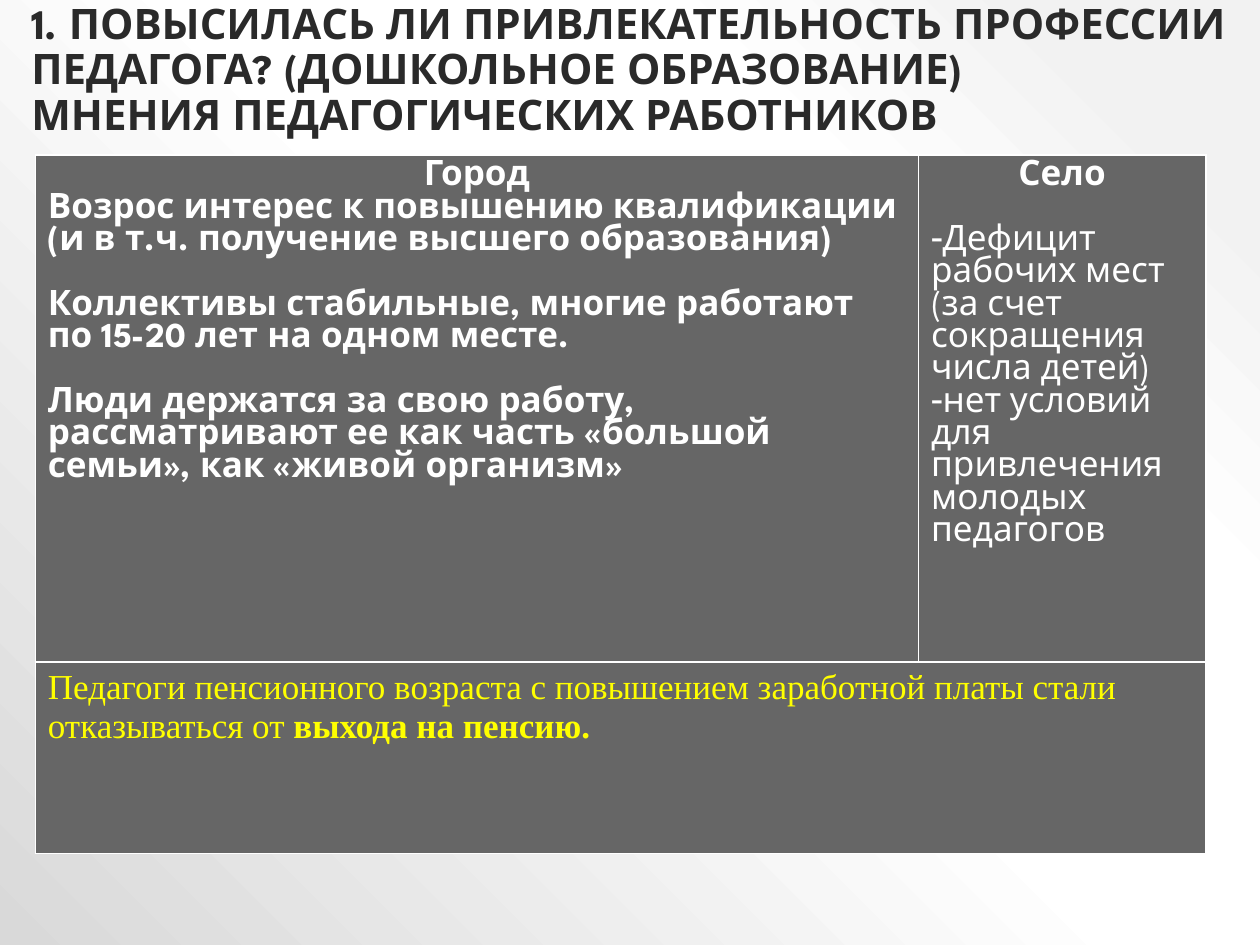
from pptx import Presentation
from pptx.dml.color import RGBColor
from pptx.enum.text import MSO_ANCHOR as Anchor, PP_ALIGN as Align
from pptx.oxml import parse_xml
from pptx.oxml.ns import nsdecls
from pptx.util import Inches, Pt

INK = RGBColor(0x2A, 0x2A, 0x2A)
WHITE = RGBColor(0xFF, 0xFF, 0xFF)
GREY = RGBColor(0x66, 0x66, 0x66)
YELLOW = RGBColor(0xFF, 0xFF, 0x00)
SILVER = RGBColor(0xF2, 0xF2, 0xF2)
ASH = RGBColor(0xD9, 0xD9, 0xD9)
SPARTAN = "League Spartan"
TIMES = "Times New Roman"
GAP = 18.5

CITY = [
    "Возрос интерес к повышению квалификации (и в т.ч. получение высшего образования)",
    "Коллективы стабильные, многие работают по 15-20 лет на одном месте.",
    "Люди держатся за свою работу, рассматривают ее как часть «большой семьи», как «живой организм»",
]
VILLAGE = [
    "Дефицит рабочих мест (за счет сокращения числа детей)",
    "нет условий для привлечения молодых педагогов",
]


def style(para, size, color, bold=False, name=SPARTAN):
    font = para.font
    font.name, font.size, font.bold = name, Pt(size), bold
    font.color.rgb = color


def paint_back(slide):
    """Fill the background with a gradient that spreads from the top right corner."""
    stops = [(10, SILVER), (28, WHITE), (48, WHITE), (100, ASH)]
    marks = "".join(
        f'<a:gs pos="{pos * 1000}"><a:srgbClr val="{color}"/></a:gs>'
        for pos, color in stops
    )
    back = parse_xml(
        f'<p:bg {nsdecls("p", "a")}><p:bgPr><a:gradFill rotWithShape="1">'
        f'<a:gsLst>{marks}</a:gsLst><a:path path="circle">'
        '<a:fillToRect l="100000" b="100000"/></a:path></a:gradFill>'
        '<a:effectLst/></p:bgPr></p:bg>'
    )
    slide.element.cSld.insert(0, back)


def add_title(slide, box):
    frame = slide.shapes.add_textbox(*box).text_frame
    frame.word_wrap = True
    frame.vertical_anchor = Anchor.BOTTOM
    para = frame.paragraphs[0]
    para.add_run().text = (
        "1. ПОВЫСИЛАСЬ ЛИ ПРИВЛЕКАТЕЛЬНОСТЬ ПРОФЕССИИ "
        "ПЕДАГОГА? (ДОШКОЛЬНОЕ ОБРАЗОВАНИЕ)"
    )
    para.add_line_break()
    para.add_run().text = "МНЕНИЯ ПЕДАГОГИЧЕСКИХ РАБОТНИКОВ"
    para.line_spacing = Pt(26)
    style(para, 24, INK, True)


def dress(cell):
    """Give a cell thin white borders and a grey fill."""
    props = cell._tc.get_or_add_tcPr()
    for side in "LRTB":
        props.append(parse_xml(
            f'<a:ln{side} {nsdecls("a")} w="{Pt(1)}"><a:solidFill>'
            f'<a:srgbClr val="{WHITE}"/></a:solidFill></a:ln{side}>'
        ))
    cell.fill.solid()
    cell.fill.fore_color.rgb = GREY


def add_dash(para):
    props = para._p.get_or_add_pPr()
    props.set("marL", "0")
    props.set("indent", "0")
    props.append(parse_xml(f'<a:buChar {nsdecls("a")} char="-"/>'))


def fill_cell(cell, head, items, gaps, dash=False):
    """Write a centred heading and its items, each with the gap above it in points."""
    frame = cell.text_frame
    top = frame.paragraphs[0]
    top.text = head
    top.alignment = Align.CENTER
    style(top, 20, WHITE, True)
    for item, gap in zip(items, gaps):
        para = frame.add_paragraph()
        para.text = item
        para.space_before = Pt(gap)
        if dash:
            add_dash(para)
        style(para, 20, WHITE, not dash)


def add_views(slide, box):
    table = slide.shapes.add_table(2, 2, *box).table
    table.first_row = table.horz_banding = False
    for col, width in zip(table.columns, (7.01, 2.28)):
        col.width = Inches(width)
    for row, height in zip(table.rows, (3.77, 1.52)):
        row.height = Inches(height)
    for cell in table.iter_cells():
        dress(cell)

    fill_cell(table.cell(0, 0), "Город", CITY, (0, GAP, GAP))
    fill_cell(table.cell(0, 1), "Село", VILLAGE, (GAP, 0), dash=True)

    foot = table.cell(1, 0)
    foot.merge(table.cell(1, 1))
    para = foot.text_frame.paragraphs[0]
    para.add_run().text = (
        "Педагоги пенсионного возраста с повышением заработной платы "
        "стали отказываться от "
    )
    end = para.add_run()
    end.text = "выхода на пенсию."
    end.font.bold = True
    style(para, 20, YELLOW, name=TIMES)


def main():
    deck = Presentation()
    deck.slide_width, deck.slide_height = Inches(10), Inches(7.5)
    slide = deck.slides.add_slide(deck.slide_layouts[6])
    paint_back(slide)
    add_title(slide, (Inches(0.15), Inches(0), Inches(9.88), Inches(1.15)))
    add_views(slide, (Inches(0.28), Inches(1.23), Inches(9.29), Inches(5.29)))
    deck.save("out.pptx")


if __name__ == "__main__":
    main()
